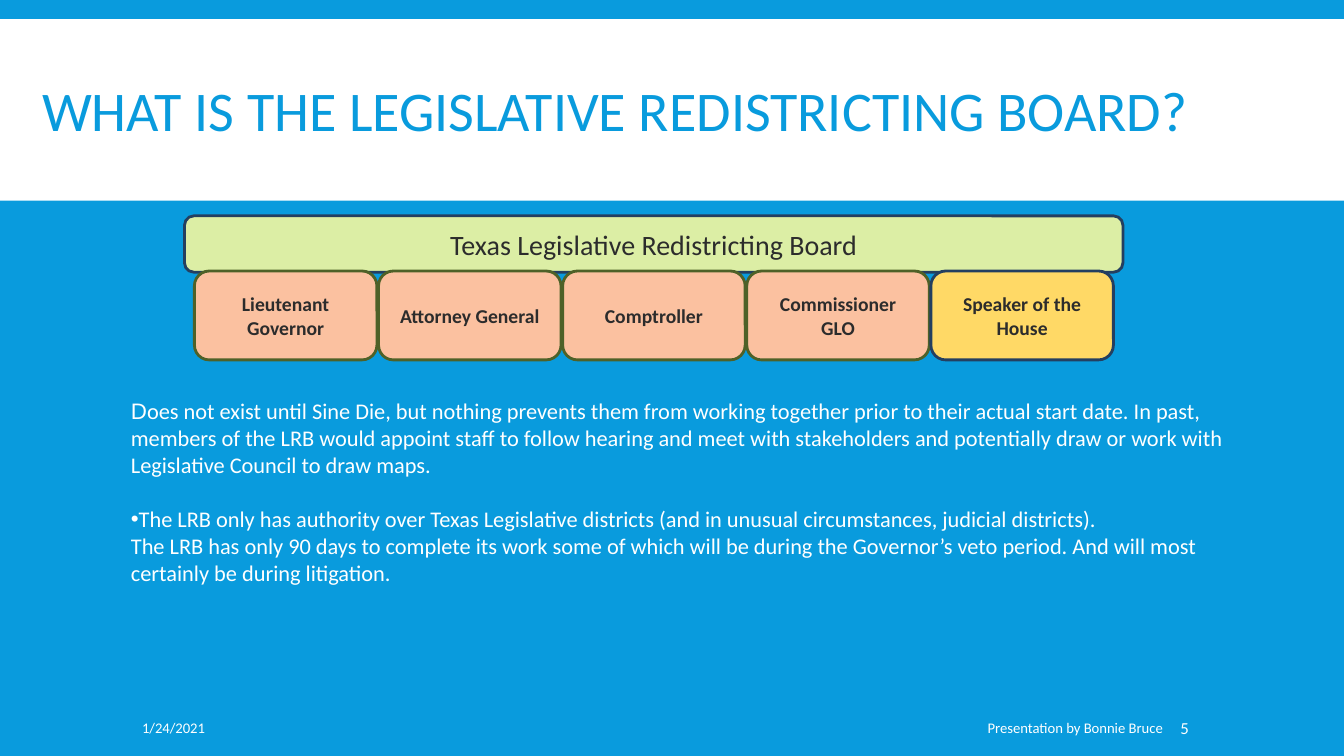
from dataclasses import dataclass

from pptx import Presentation
from pptx import util as u
from pptx.dml.color import RGBColor
from pptx.enum import shapes, text
from lxml import etree

Cm, Pt = u.Cm, u.Pt
BLUE = RGBColor(0x09, 0x9B, 0xDD)
WHITE = RGBColor(0xFF, 0xFF, 0xFF)
DARK = RGBColor(0x2C, 0x2C, 0x2C)
LIME = RGBColor(0xDC, 0xEE, 0xA5)
PEACH = RGBColor(0xFB, 0xC1, 0xA0)
GOLD = RGBColor(0xFF, 0xD9, 0x66)
NAVY = RGBColor(0x24, 0x3F, 0x60)
OLIVE = RGBColor(0x4E, 0x61, 0x28)
LEFT, MID, RIGHT = text.PP_ALIGN.LEFT, text.PP_ALIGN.CENTER, text.PP_ALIGN.RIGHT
WIDE = 33.87


@dataclass
class Box:
    """Place in centimetres."""
    x: float
    y: float
    w: float
    h: float

    def lens(self) -> list:
        return [Cm(v) for v in (self.x, self.y, self.w, self.h)]


@dataclass
class Seat:
    name: str
    fill: RGBColor = PEACH
    line: RGBColor = OLIVE


@dataclass
class Note:
    words: str
    box: Box
    size: float
    align: int = LEFT
    pad_l: float = 0.25
    pad_r: float = 0.25


def add_run(para, words: str, size: float, color: RGBColor,
            bold: bool = False, face: str = "Calibri") -> None:
    run = para.add_run()
    run.text = words
    font = run.font
    font.name, font.size, font.bold = face, Pt(size), bold
    font.color.rgb = color


def set_frame(frame, anchor=text.MSO_ANCHOR.MIDDLE) -> None:
    frame.word_wrap = True
    frame.auto_size = text.MSO_AUTO_SIZE.NONE
    frame.vertical_anchor = anchor


def add_card(slide, seat: Seat, box: Box, size: float, bold: bool) -> None:
    card = slide.shapes.add_shape(
        shapes.MSO_SHAPE.ROUNDED_RECTANGLE, *box.lens())
    card.shadow.inherit = False
    card.fill.solid()
    card.fill.fore_color.rgb = seat.fill
    card.line.color.rgb = seat.line
    card.line.width = Pt(2)
    set_frame(card.text_frame)
    para = card.text_frame.paragraphs[0]
    para.alignment = MID
    add_run(para, seat.name, size, DARK, bold)


def add_note(slide, note: Note) -> None:
    frame = slide.shapes.add_textbox(*note.box.lens()).text_frame
    set_frame(frame)
    frame.margin_left, frame.margin_right = Cm(note.pad_l), Cm(note.pad_r)
    para = frame.paragraphs[0]
    para.alignment = note.align
    add_run(para, note.words, note.size, WHITE)


def add_bullet(para) -> None:
    props = para._p.get_or_add_pPr()
    props.set("marL", "0")
    props.set("indent", str(-Cm(0.28)))
    space = "{http://schemas.openxmlformats.org/drawingml/2006/main}"
    color = etree.SubElement(props, space + "buClr")
    etree.SubElement(color, space + "srgbClr", val=str(WHITE))
    etree.SubElement(props, space + "buFont", typeface="Arial")
    etree.SubElement(props, space + "buChar", char="•")


def add_head(slide) -> None:
    title = slide.shapes.title
    title.left, title.top, title.width, title.height = Box(
        0.81, 0.79, 32.26, 4.19).lens()
    set_frame(title.text_frame)
    para = title.text_frame.paragraphs[0]
    para.alignment, para.line_spacing = LEFT, 0.85
    add_run(para, "WHAT IS THE LEGISLATIVE REDISTRICTING BOARD?", 40, BLUE)
    # White band behind the title
    band = slide.shapes.add_shape(
        shapes.MSO_SHAPE.RECTANGLE, *Box(0, 0.48, WIDE, 4.58).lens())
    band.shadow.inherit = False
    band.fill.solid()
    band.fill.fore_color.rgb = WHITE
    band.line.fill.background()
    title.element.addprevious(band.element)


def add_body(slide) -> None:
    frame = slide.shapes.add_textbox(
        *Box(3.05, 9.53, 29.18, 5.38).lens()).text_frame
    set_frame(frame, text.MSO_ANCHOR.TOP)
    frame.margin_top = Cm(0.48)
    para = frame.paragraphs[0]
    para.space_after = Pt(19.5)
    add_run(para, "D", 16, WHITE, face="Arial")
    add_run(para, "oes not exist until Sine Die, but nothing prevents them from "
            "working together prior to their actual start date. In past, members "
            "of the LRB would appoint staff to follow hearing and meet with "
            "stakeholders and potentially draw or work with Legislative Council "
            "to draw maps.", 16, WHITE)
    para = frame.add_paragraph()
    add_bullet(para)
    add_run(para, "The LRB only has authority over Texas Legislative districts "
            "(and in unusual circumstances, judicial districts).", 16, WHITE)
    add_run(frame.add_paragraph(), "The LRB has only 90 days to complete its work "
            "some of which will be during the Governor’s veto period. And will "
            "most certainly be during litigation.", 16, WHITE)


SEATS = [
    Seat("Lieutenant Governor"),
    Seat("Attorney General"),
    Seat("Comptroller"),
    Seat("Commissioner GLO"),
    Seat("Speaker of the House", GOLD, NAVY),
]
NOTES = [
    Note("1/24/2021", Box(3.33, 17.83, 8.33, 1.02), 10.5, pad_r=0.13),
    Note("5", Box(29.62, 17.83, 2.62, 1.02), 12, pad_l=0.13),
    Note("Presentation by Bonnie Bruce", Box(15.54, 17.83, 14.02, 1.02),
         10.5, RIGHT),
]


def main() -> None:
    deck = Presentation()
    deck.slide_width, deck.slide_height = Cm(WIDE), Cm(19.05)
    slide = deck.slides.add_slide(deck.slide_layouts[5])
    slide.background.fill.solid()
    slide.background.fill.fore_color.rgb = BLUE
    add_head(slide)

    # Board and its five members
    board = Seat("Texas Legislative Redistricting Board", LIME, NAVY)
    add_card(slide, board, Box(4.65, 5.44, 23.65, 1.42), 20, False)
    for i, seat in enumerate(SEATS):
        add_card(slide, seat, Box(4.9 + 4.64 * i, 6.83, 4.6, 2.24), 14, True)

    add_body(slide)

    # Footer
    for note in NOTES:
        add_note(slide, note)
    deck.save("out.pptx")


if __name__ == "__main__":
    main()
